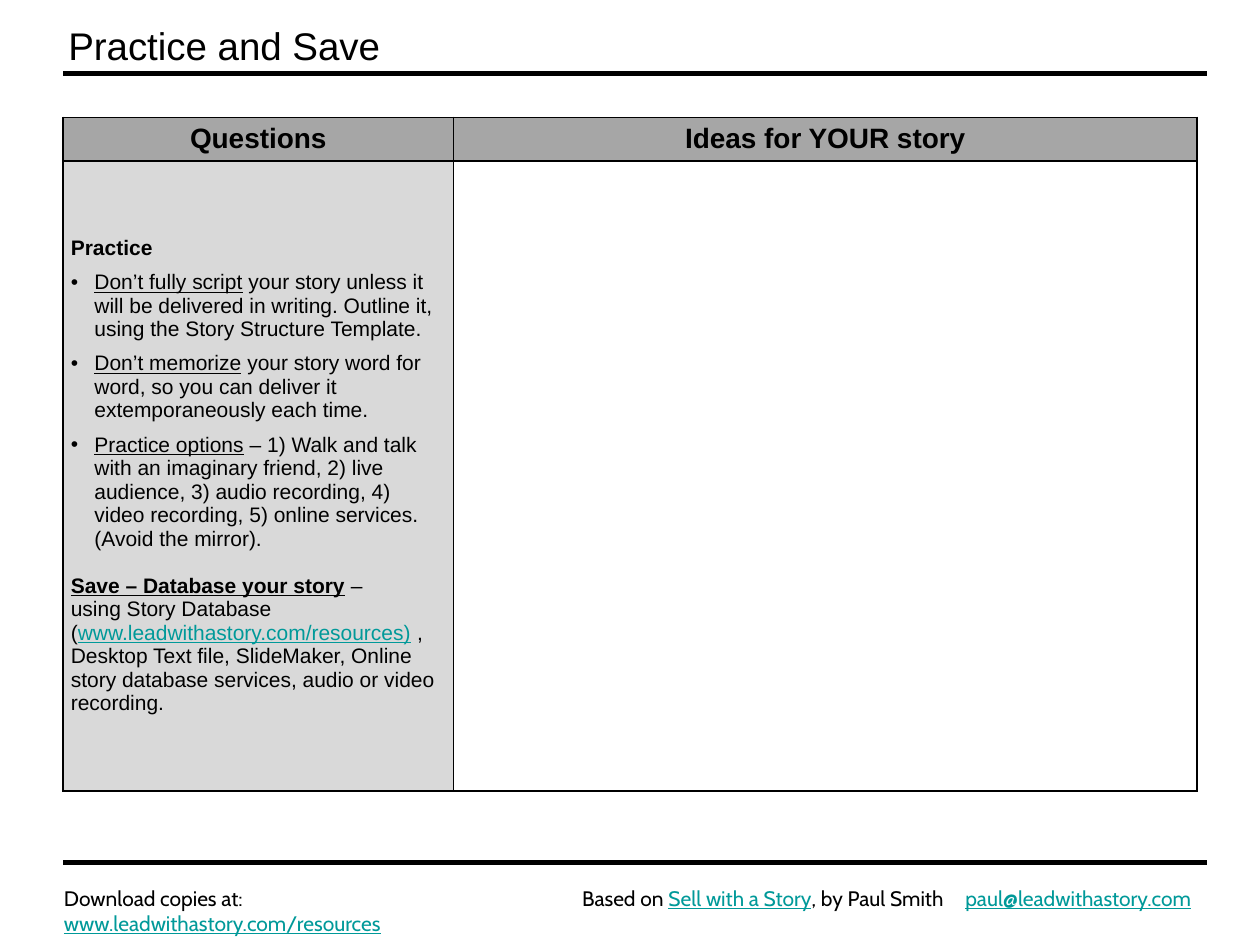
from dataclasses import dataclass

from lxml.etree import SubElement
from pptx import Presentation
from pptx.dml.color import RGBColor
from pptx.enum.shapes import MSO_CONNECTOR
from pptx.enum.text import MSO_ANCHOR, PP_ALIGN
from pptx.oxml import parse_xml
from pptx.oxml.ns import nsdecls, qn
from pptx.util import Pt

BLACK = RGBColor(0x00, 0x00, 0x00)
TEAL = RGBColor(0x00, 0x99, 0x99)
HEADER_GRAY = RGBColor(0xA6, 0xA6, 0xA6)
QUESTION_GRAY = RGBColor(0xD9, 0xD9, 0xD9)
LEFT = 36
RULE_RIGHT = 690
FOOTER_TOP = 502.5


@dataclass
class Span:
    text: str
    bold: bool = False
    underline: bool = False
    color: RGBColor = BLACK


@dataclass
class Para:
    spans: list[Span]
    before: float = 0
    bullet: bool = False
    align: PP_ALIGN = PP_ALIGN.LEFT


@dataclass
class Footer:
    left: float
    width: float
    lines: list[list[Span]]


def link(text: str) -> Span:
    return Span(text, underline=True, color=TEAL)


def tip(lead: str, rest: str) -> Para:
    return Para([Span(lead, underline=True), Span(rest)], before=6, bullet=True)


FOOTERS = [
    Footer(29.5, 296, [[Span("Download copies at: ")],
                       [link("www.leadwithastory.com/resources")]]),
    Footer(544.5, 146, [[link("paul@leadwithastory.com")]]),
    Footer(325.5, 226, [[Span("Based on "), link("Sell with a Story"),
                         Span(", by Paul Smith")]]),
]

HEADERS = ["Questions", "Ideas for YOUR story"]

QUESTIONS = [
    Para([Span("Practice", bold=True)]),
    tip("Don’t fully script", " your story unless it will be delivered in writing. "
        "Outline it, using the Story Structure Template."),
    tip("Don’t memorize", " your story word for word, so you can deliver it "
        "extemporaneously each time."),
    tip("Practice options", " – 1) Walk and talk with an imaginary friend, "
        "2) live audience, 3) audio recording, 4) video recording, "
        "5) online services. (Avoid the mirror)."),
    Para([Span("Save – Database your story", bold=True, underline=True),
          Span(" –")], before=13.5),
    Para([Span("using Story Database ("),
          link("www.leadwithastory.com/resources)"),
          Span(" , Desktop Text file, SlideMaker, Online story database "
               "services, audio or video recording.")]),
]


def add_spans(p, spans: list[Span], size: float, font: str) -> None:
    for span in spans:
        r = p.add_run()
        r.text = span.text
        r.font.name = font
        r.font.size = Pt(size)
        r.font.bold = span.bold
        r.font.underline = span.underline
        r.font.color.rgb = span.color


def add_bullet(p) -> None:
    pPr = p._p.get_or_add_pPr()
    pPr.set("marL", str(Pt(13.5)))
    pPr.set("indent", str(-Pt(13.5)))
    SubElement(pPr, qn("a:buFont")).set("typeface", "Arial")
    SubElement(pPr, qn("a:buChar")).set("char", "•")


def add_rule(slide, y: float) -> None:
    line = slide.shapes.add_connector(
        MSO_CONNECTOR.STRAIGHT, Pt(LEFT), Pt(y), Pt(RULE_RIGHT), Pt(y))
    line.line.color.rgb = BLACK
    line.line.width = Pt(3)
    SubElement(line._element.spPr, qn("a:effectLst"))


def add_footer(slide, footer: Footer) -> None:
    tf = slide.shapes.add_textbox(
        Pt(footer.left), Pt(FOOTER_TOP), Pt(footer.width), Pt(21.6)).text_frame
    tf.word_wrap = True
    p = tf.paragraphs[0]
    for i, spans in enumerate(footer.lines):
        if i:
            p.add_line_break()
        add_spans(p, spans, 12, "Cabin")


def set_borders(cell) -> None:
    tcPr = cell._tc.get_or_add_tcPr()
    for i, side in enumerate(("lnL", "lnR", "lnT", "lnB")):
        tcPr.insert(i, parse_xml(
            f'<a:{side} {nsdecls("a")} w="{Pt(1)}"><a:solidFill>'
            f'<a:srgbClr val="{BLACK}"/></a:solidFill></a:{side}>'))


def fill_cell(cell, paras: list[Para], size: float, fill: RGBColor | None) -> None:
    cell.vertical_anchor = MSO_ANCHOR.MIDDLE
    cell.margin_left = cell.margin_right = Pt(4.5)
    cell.margin_top = cell.margin_bottom = 0
    if fill is None:
        cell.fill.background()
    else:
        cell.fill.solid()
        cell.fill.fore_color.rgb = fill
    set_borders(cell)
    tf = cell.text_frame
    for i, para in enumerate(paras):
        p = tf.add_paragraph() if i else tf.paragraphs[0]
        if para.bullet:
            add_bullet(p)
        p.alignment = para.align
        p.space_before = Pt(para.before)
        add_spans(p, para.spans, size, "Arial")


def add_story_table(slide) -> None:
    table = slide.shapes.add_table(
        2, 2, Pt(LEFT), Pt(67), Pt(648), Pt(385)).table
    for column, width in zip(table.columns, (223.2, 424.8)):
        column.width = Pt(width)
    for row, height in zip(table.rows, (25, 360)):
        row.height = Pt(height)
    for i, header in enumerate(HEADERS):
        heading = Para([Span(header, bold=True)], align=PP_ALIGN.CENTER)
        fill_cell(table.cell(0, i), [heading], 16, HEADER_GRAY)
    fill_cell(table.cell(1, 0), QUESTIONS, 12, QUESTION_GRAY)
    fill_cell(table.cell(1, 1), [], 12, None)


def set_title(slide, text: str) -> None:
    title = slide.shapes.title
    title.left, title.top, title.width, title.height = Pt(LEFT), 0, Pt(648), Pt(51)
    tf = title.text_frame
    tf.margin_left = tf.margin_right = tf.margin_top = tf.margin_bottom = Pt(3)
    tf.vertical_anchor = MSO_ANCHOR.MIDDLE
    p = tf.paragraphs[0]
    p.alignment = PP_ALIGN.LEFT
    add_spans(p, [Span(text)], 22, "Arial")


def main() -> None:
    prs = Presentation()
    prs.slide_width, prs.slide_height = Pt(720), Pt(540)
    slide = prs.slides.add_slide(prs.slide_layouts[5])
    for y in (42, 493):
        add_rule(slide, y)
    for footer in FOOTERS:
        add_footer(slide, footer)
    set_title(slide, "Practice and Save")
    add_story_table(slide)
    prs.save("out.pptx")


if __name__ == "__main__":
    main()
